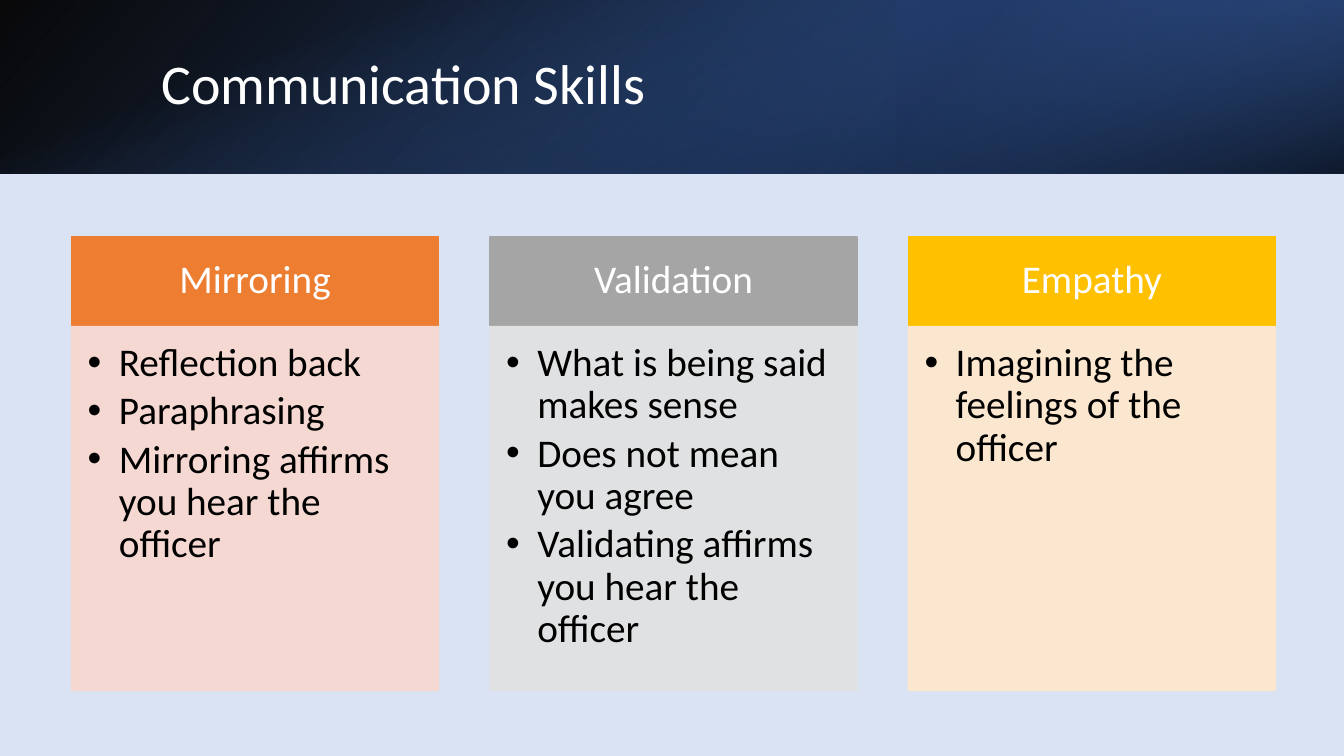
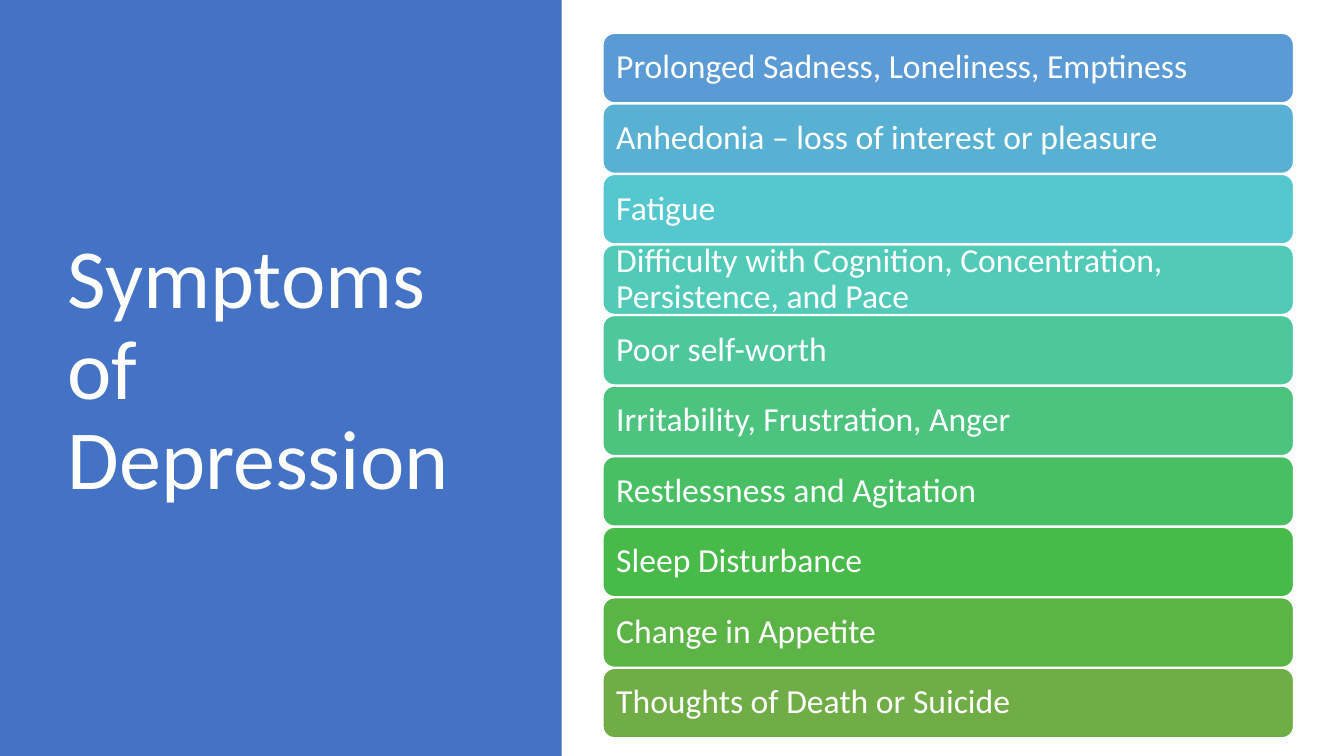
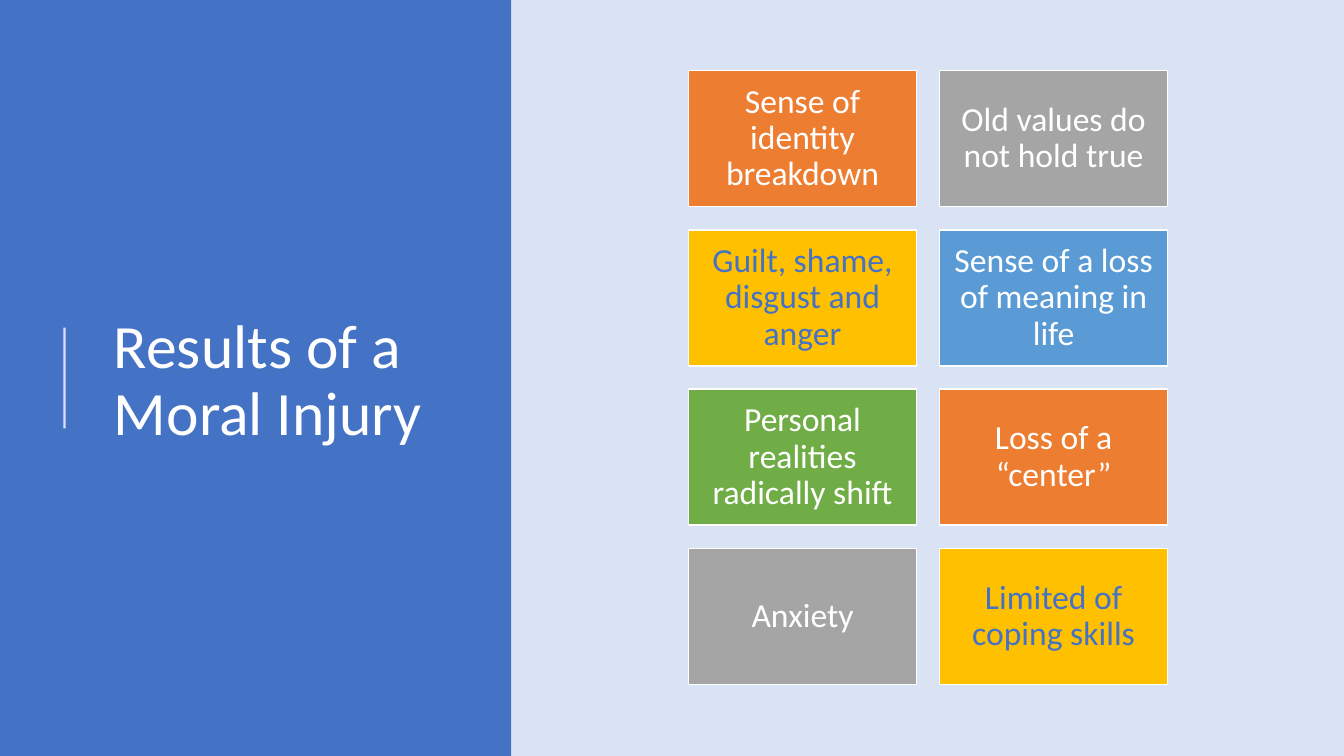
from lxml import etree
from pptx import Presentation
from pptx.dml.color import RGBColor
from pptx.enum.shapes import MSO_CONNECTOR, MSO_SHAPE
from pptx.enum.text import MSO_ANCHOR, MSO_AUTO_SIZE, PP_ALIGN
from pptx.oxml.ns import qn
from pptx.util import Inches, Pt

RECTANGLE = MSO_SHAPE.RECTANGLE
ROUNDED = MSO_SHAPE.ROUNDED_RECTANGLE
STRAIGHT = MSO_CONNECTOR.STRAIGHT
TOP, MIDDLE = MSO_ANCHOR.TOP, MSO_ANCHOR.MIDDLE
LEFT, CENTER = PP_ALIGN.LEFT, PP_ALIGN.CENTER
NO_AUTOFIT = MSO_AUTO_SIZE.NONE

WHITE = RGBColor(0xFF, 0xFF, 0xFF)
BLACK = RGBColor(0x00, 0x00, 0x00)
PALE_BLUE = RGBColor(0xDA, 0xE3, 0xF3)
BLUE = RGBColor(0x44, 0x72, 0xC4)
DEEP_BLUE = RGBColor(0x2F, 0x55, 0x97)
NAVY = RGBColor(0x20, 0x38, 0x64)
ORANGE = RGBColor(0xED, 0x7D, 0x31)
GRAY = RGBColor(0xA5, 0xA5, 0xA5)
GOLD = RGBColor(0xFF, 0xC0, 0x00)
SKY = RGBColor(0x5B, 0x9B, 0xD5)
GREEN = RGBColor(0x70, 0xAD, 0x47)
PALE_ORANGE = RGBColor(0xF8, 0xD7, 0xCE)
PALE_GRAY = RGBColor(0xE1, 0xE1, 0xE1)
PALE_GOLD = RGBColor(0xFF, 0xE8, 0xCC)
AQUA = RGBColor(0x58, 0xB1, 0xD2)
TURQUOISE = RGBColor(0x55, 0xC7, 0xCE)
TEAL = RGBColor(0x52, 0xCA, 0xB8)
SEA_GREEN = RGBColor(0x4F, 0xC7, 0x9C)
MINT = RGBColor(0x4C, 0xC3, 0x7F)
EMERALD = RGBColor(0x49, 0xBF, 0x64)
BRIGHT_GREEN = RGBColor(0x47, 0xBA, 0x49)
LEAF = RGBColor(0x5C, 0xB4, 0x47)

COLUMNS = [
    ("Mirroring", ORANGE, PALE_ORANGE,
     ["Reflection back", "Paraphrasing", "Mirroring affirms you hear the officer"]),
    ("Validation", GRAY, PALE_GRAY,
     ["What is being said makes sense", "Does not mean you agree",
      "Validating affirms you hear the officer"]),
    ("Empathy", GOLD, PALE_GOLD, ["Imagining the feelings of the officer"]),
]

SYMPTOMS = [
    ("Prolonged Sadness, Loneliness, Emptiness", SKY),
    ("Anhedonia – loss of interest or pleasure", AQUA),
    ("Fatigue", TURQUOISE),
    ("Difficulty with Cognition, Concentration, Persistence, and Pace", TEAL),
    ("Poor self-worth", SEA_GREEN),
    ("Irritability, Frustration, Anger", MINT),
    ("Restlessness and Agitation", EMERALD),
    ("Sleep Disturbance", BRIGHT_GREEN),
    ("Change in Appetite", LEAF),
    ("Thoughts of Death or Suicide", GREEN),
]

RESULTS = [
    ("Sense of identity breakdown", ORANGE, WHITE),
    ("Old values do not hold true", GRAY, WHITE),
    ("Guilt, shame, disgust and anger", GOLD, BLUE),
    ("Sense of a loss of meaning in life", SKY, WHITE),
    ("Personal realities radically shift", GREEN, WHITE),
    ("Loss of a “center”", ORANGE, WHITE),
    ("Anxiety", GRAY, WHITE),
    ("Limited of coping skills", GOLD, BLUE),
]


def set_opacity(color_element, percent):
    alpha = etree.SubElement(color_element, qn("a:alpha"))
    alpha.set("val", str(percent * 1000))


class Deck:
    font_name = "Calibri"
    width, height = 13.33, 7.5
    band_height = 1.72

    def __init__(self):
        self.presentation = Presentation()
        self.presentation.slide_width = Inches(self.width)
        self.presentation.slide_height = Inches(self.height)
        self.slide = None

    def add_slide(self, background):
        self.slide = self.presentation.slides.add_slide(self.presentation.slide_layouts[5])
        fill = self.slide.background.fill
        fill.solid()
        fill.fore_color.rgb = background

    def add_text(self, shape, lines, size, color, align=LEFT, anchor=MIDDLE,
                 insets=(0.1, 0.1, 0.1, 0.1), bullets=False):
        frame = shape.text_frame
        frame.word_wrap = True
        frame.auto_size = NO_AUTOFIT
        frame.vertical_anchor = anchor
        (frame.margin_left, frame.margin_top,
         frame.margin_right, frame.margin_bottom) = map(Inches, insets)
        for index, line in enumerate(lines):
            paragraph = frame.add_paragraph() if index else frame.paragraphs[0]
            paragraph.alignment = align
            paragraph.line_spacing = 0.9
            if bullets:
                self.add_bullet(paragraph)
            run = paragraph.add_run()
            run.text = line
            run.font.name = self.font_name
            run.font.size = Pt(size)
            run.font.color.rgb = color

    def add_bullet(self, paragraph):
        paragraph.space_after = Pt(4.2)
        properties = paragraph._p.get_or_add_pPr()
        properties.set("marL", str(Inches(0.31)))
        properties.set("indent", str(-Inches(0.31)))
        etree.SubElement(properties, qn("a:buFont")).set("typeface", "Arial")
        etree.SubElement(properties, qn("a:buChar")).set("char", "•")

    def add_title(self, text, size, left, top, width, height):
        title = self.slide.shapes.title
        title.left, title.top = Inches(left), Inches(top)
        title.width, title.height = Inches(width), Inches(height)
        self.slide.shapes.element.append(title.element)
        self.add_text(title, [text], size, WHITE, insets=(0.1, 0.05, 0.1, 0.05))

    def add_box(self, left, top, width, height, fill, line=None, kind=RECTANGLE, opacity=100):
        box = self.slide.shapes.add_shape(
            kind, Inches(left), Inches(top), Inches(width), Inches(height))
        box.shadow.inherit = False
        box.fill.solid()
        box.fill.fore_color.rgb = fill
        if line is None:
            box.line.fill.background()
        else:
            box.line.color.rgb = line
            box.line.width = Pt(1)
        if opacity < 100:
            for color_element in box.element.spPr.iter(qn("a:srgbClr")):
                set_opacity(color_element, opacity)
        return box

    def add_gradient_box(self, left, top, width, height, stops, angle, rotation=0, flip=False):
        box = self.add_box(left, top, width, height, BLUE)
        box.rotation = rotation
        if flip:
            box.element.spPr.xfrm.set("flipH", "1")
        box.fill.gradient()
        box.fill.gradient_angle = 360 - angle
        for stop, (position, color, _) in zip(box.fill.gradient_stops, stops):
            stop.position = position
            stop.color.rgb = color
        color_elements = box.element.spPr.iter(qn("a:srgbClr"))
        for color_element, (_, _, opacity) in zip(color_elements, stops):
            set_opacity(color_element, opacity)

    def add_header_band(self):
        band, half = self.band_height, self.width / 2
        self.add_gradient_box(0, 0, self.width, band,
                              [(0, BLACK, 96), (1, DEEP_BLUE, 100)], 140, flip=True)
        self.add_gradient_box(8.89, 0, 4.44, band,
                              [(0.19, NAVY, 68), (1, BLUE, 79)], 320, rotation=180, flip=True)
        self.add_gradient_box(half - band / 2, band / 2 - half, band, self.width,
                              [(0.23, BLUE, 0), (0.99, BLACK, 74)], 340, rotation=90)

    def add_side_panel(self, width):
        self.add_box(0, 0, width, self.height, BLUE)

    def add_rule(self, x, start, end):
        rule = self.slide.shapes.add_connector(
            STRAIGHT, Inches(x), Inches(start), Inches(x), Inches(end))
        rule.line.color.rgb = WHITE
        rule.line.width = Pt(1.5)
        properties = rule.element.spPr
        for color_element in properties.iter(qn("a:srgbClr")):
            set_opacity(color_element, 80)
        etree.SubElement(properties, qn("a:effectLst"))

    def add_column(self, left, heading, color, tint, points):
        header = self.add_box(left, 2.35, 3.64, 0.88, color, color)
        self.add_text(header, [heading], 28, WHITE, CENTER, insets=(0.22, 0.12, 0.22, 0.12))
        body = self.add_box(left, 3.24, 3.64, 3.61, tint, tint, opacity=90)
        self.add_text(body, points, 28, BLACK, anchor=TOP,
                      insets=(0.16, 0.16, 0.22, 0.24), bullets=True)


def build_communication(deck):
    deck.add_slide(PALE_BLUE)
    deck.add_header_band()
    deck.add_title("Communication Skills", 40, 1.5, 0.38, 10.98, 0.96)
    for index, column in enumerate(COLUMNS):
        deck.add_column(0.71 + 4.15 * index, *column)


def build_symptoms(deck):
    deck.add_slide(WHITE)
    deck.add_side_panel(5.57)
    deck.add_title("Symptoms of Depression", 60, 0.57, 0.68, 4.16, 6.02)
    for index, (symptom, color) in enumerate(SYMPTOMS):
        bar = deck.add_box(5.98, 0.33 + 0.7 * index, 6.85, 0.69, color, WHITE, ROUNDED)
        deck.add_text(bar, [symptom], 24, WHITE)


def build_results(deck):
    deck.add_slide(PALE_BLUE)
    deck.add_side_panel(5.07)
    deck.add_title("Results of a Moral Injury", 44, 1.03, 0.78, 3.69, 6.02)
    deck.add_rule(0.64, 4.25, 3.25)
    for index, (result, color, text_color) in enumerate(RESULTS):
        row, column = divmod(index, 2)
        tile = deck.add_box(6.83 + 2.49 * column, 0.7 + 1.58 * row, 2.26, 1.35, color, WHITE)
        deck.add_text(tile, [result], 24, text_color, CENTER)


def main():
    deck = Deck()
    build_communication(deck)
    build_symptoms(deck)
    build_results(deck)
    deck.presentation.save("out.pptx")


if __name__ == "__main__":
    main()
